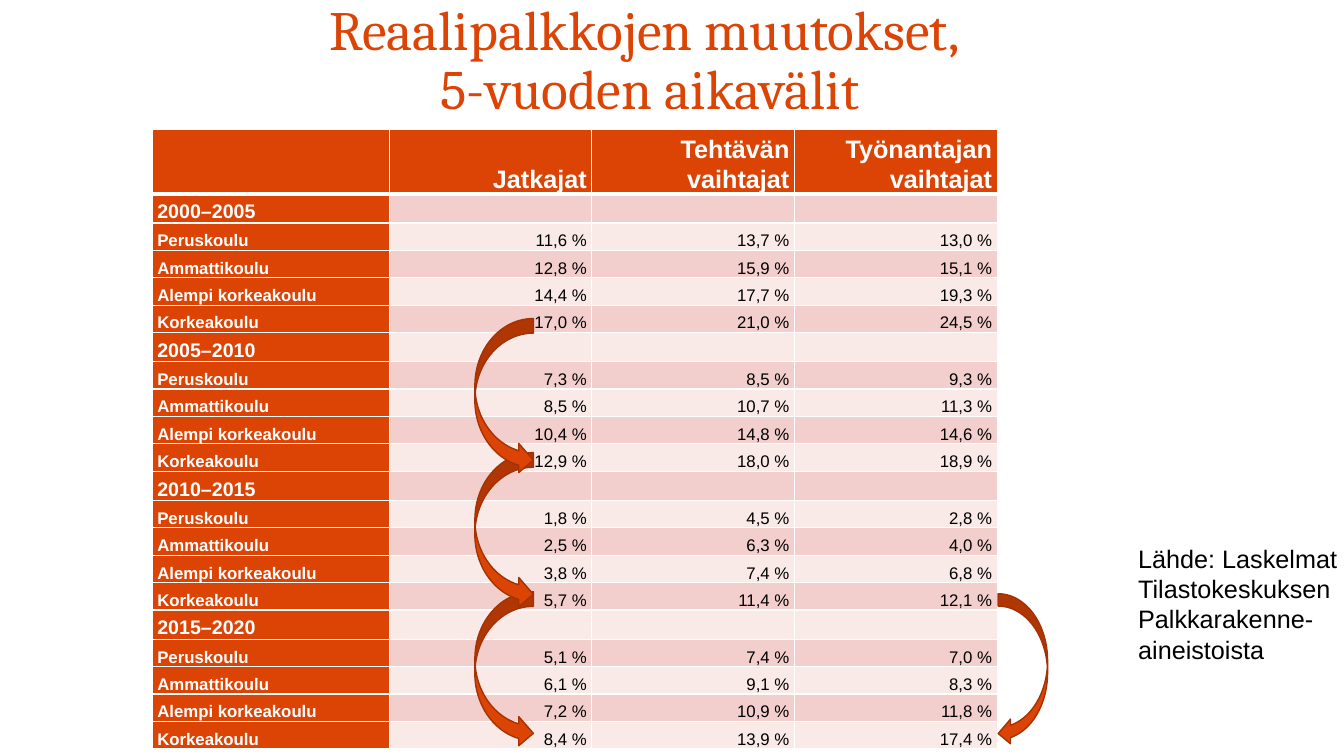
from lxml import etree
from pptx import Presentation
from pptx.dml.color import RGBColor
from pptx.enum import shapes, text
from pptx.oxml import ns
from pptx.util import Inches, Pt

ORANGE, DARK_ORANGE = "DC4405", "A33204"
BANDS = ("F9E9E7", "F2CFCC")
WHITE, BLACK = "FFFFFF", "000000"

TITLE = "Reaalipalkkojen muutokset, \v5-vuoden aikavälit"
SOURCE_NOTE = "Lähde: Laskelmat\nTilastokeskuksen\nPalkkarakenne-\naineistoista"
HEADER = ("", "Jatkajat", "Tehtävän vaihtajat", "Työnantajan vaihtajat")
SCHOOLS = ("Peruskoulu", "Ammattikoulu", "Alempi korkeakoulu", "Korkeakoulu")
CHANGES = {
    "2000–2005": (("11,6", "13,7", "13,0"), ("12,8", "15,9", "15,1"),
                  ("14,4", "17,7", "19,3"), ("17,0", "21,0", "24,5")),
    "2005–2010": (("7,3", "8,5", "9,3"), ("8,5", "10,7", "11,3"),
                  ("10,4", "14,8", "14,6"), ("12,9", "18,0", "18,9")),
    "2010–2015": (("1,8", "4,5", "2,8"), ("2,5", "6,3", "4,0"),
                  ("3,8", "7,4", "6,8"), ("5,7", "11,4", "12,1")),
    "2015–2020": (("5,1", "7,4", "7,0"), ("6,1", "9,1", "8,3"),
                  ("7,2", "10,9", "11,8"), ("8,4", "13,9", "17,4")),
}
RIGHT_ARROW = shapes.MSO_SHAPE.CURVED_RIGHT_ARROW
LEFT_ARROW = shapes.MSO_SHAPE.CURVED_LEFT_ARROW
ARROWS = (  # kind, left, top, width, height
    (LEFT_ARROW, 9.9, 5.89, 0.49, 1.51),
    (RIGHT_ARROW, 4.71, 5.87, 0.58, 1.55),
    (RIGHT_ARROW, 4.71, 4.49, 0.58, 1.55),
    (RIGHT_ARROW, 4.71, 3.16, 0.58, 1.55),
)
TABLE_BOX = (1.51, 1.28, 8.39, 6.15)
COLUMN_WIDTHS = (2.35, 2.01, 2.01, 2.01)
HEADER_HEIGHT, PERIOD_HEIGHT = 0.64, 0.29


def rgb(value):
    return RGBColor.from_string(value)


def inches(lengths):
    return [Inches(length) for length in lengths]


def write(frame, words, size, color=BLACK, font="Arial", bold=False,
          align=text.PP_ALIGN.LEFT, spacing=None, after=None):
    frame.text = words
    for paragraph in frame.paragraphs:
        paragraph.alignment = align
        paragraph.line_spacing = spacing
        paragraph.space_after = after
        for run in paragraph.runs:
            run.font.size, run.font.name, run.font.bold = Pt(size), font, bold
            run.font.color.rgb = rgb(color)


def set_borders(cell, top, bottom):
    """White cell borders, 1 pt wide at the sides."""
    properties = cell._tc.get_or_add_tcPr()
    for side, width in (("L", 1), ("R", 1), ("T", top), ("B", bottom)):
        line = etree.SubElement(properties, ns.qn(f"a:ln{side}"), w=str(Pt(width)))
        fill = etree.SubElement(line, ns.qn("a:solidFill"))
        etree.SubElement(fill, ns.qn("a:srgbClr"), val=WHITE)


def fill_cell(cell, words, row, column, size):
    heading = row == 0 or column == 0
    set_borders(cell, top=3 if row == 1 else 1, bottom=3 if row == 0 else 1)
    cell.fill.solid()
    cell.fill.fore_color.rgb = rgb(ORANGE if heading else BANDS[row % 2])
    cell.margin_left = cell.margin_right = Inches(0.05)
    cell.margin_top = cell.margin_bottom = 0
    cell.vertical_anchor = text.MSO_ANCHOR.BOTTOM
    if words:
        write(cell.text_frame, words, size, WHITE if heading else BLACK, bold=heading,
              align=text.PP_ALIGN.RIGHT if column else text.PP_ALIGN.LEFT,
              spacing=1.07, after=Pt(8))
    else:
        # An empty cell would otherwise stretch its row to the default size
        etree.SubElement(cell.text_frame.paragraphs[0]._p, ns.qn("a:endParaRPr"),
                         sz=str(size * 100))


def add_wage_table(slide):
    school_height = ((TABLE_BOX[3] - HEADER_HEIGHT - PERIOD_HEIGHT * len(CHANGES))
                     / (len(SCHOOLS) * len(CHANGES)))
    rows = [(HEADER, 18, HEADER_HEIGHT)]
    for period, changes in CHANGES.items():
        rows.append(((period, "", "", ""), 14, PERIOD_HEIGHT))
        for school, values in zip(SCHOOLS, changes):
            percents = [f"{value} %" for value in values]
            rows.append(((school, *percents), 12, school_height))
    table = slide.shapes.add_table(len(rows), len(HEADER), *inches(TABLE_BOX)).table
    for column, width in zip(table.columns, COLUMN_WIDTHS):
        column.width = Inches(width)
    for r, (words, size, height) in enumerate(rows):
        table.rows[r].height = Inches(height)
        for c, word in enumerate(words):
            fill_cell(table.cell(r, c), word, r, c, size)


def add_arrow(slide, kind, *box):
    arrow = slide.shapes.add_shape(kind, *inches(box))
    arrow.shadow.inherit = False
    arrow.fill.solid()
    arrow.fill.fore_color.rgb = rgb(ORANGE)
    arrow.line.color.rgb = rgb(DARK_ORANGE)
    arrow.line.width = Pt(1)


def main():
    deck = Presentation()
    deck.slide_width, deck.slide_height = inches((13.33, 7.5))
    slide = deck.slides.add_slide(deck.slide_layouts[6])

    title = slide.shapes.add_textbox(*inches((0.59, 0.1, 11.71, 1.03))).text_frame
    title.word_wrap = True
    title.vertical_anchor = text.MSO_ANCHOR.MIDDLE
    write(title, TITLE, 39.6, ORANGE, "Cambria", align=text.PP_ALIGN.CENTER, spacing=0.9)

    add_wage_table(slide)

    note = slide.shapes.add_textbox(*inches((11.19, 5.34, 2.2, 1.31))).text_frame
    note.word_wrap = False
    note.auto_size = text.MSO_AUTO_SIZE.SHAPE_TO_FIT_TEXT
    write(note, SOURCE_NOTE, 18)

    for arrow in ARROWS:
        add_arrow(slide, *arrow)
    deck.save("out.pptx")


if __name__ == "__main__":
    main()
